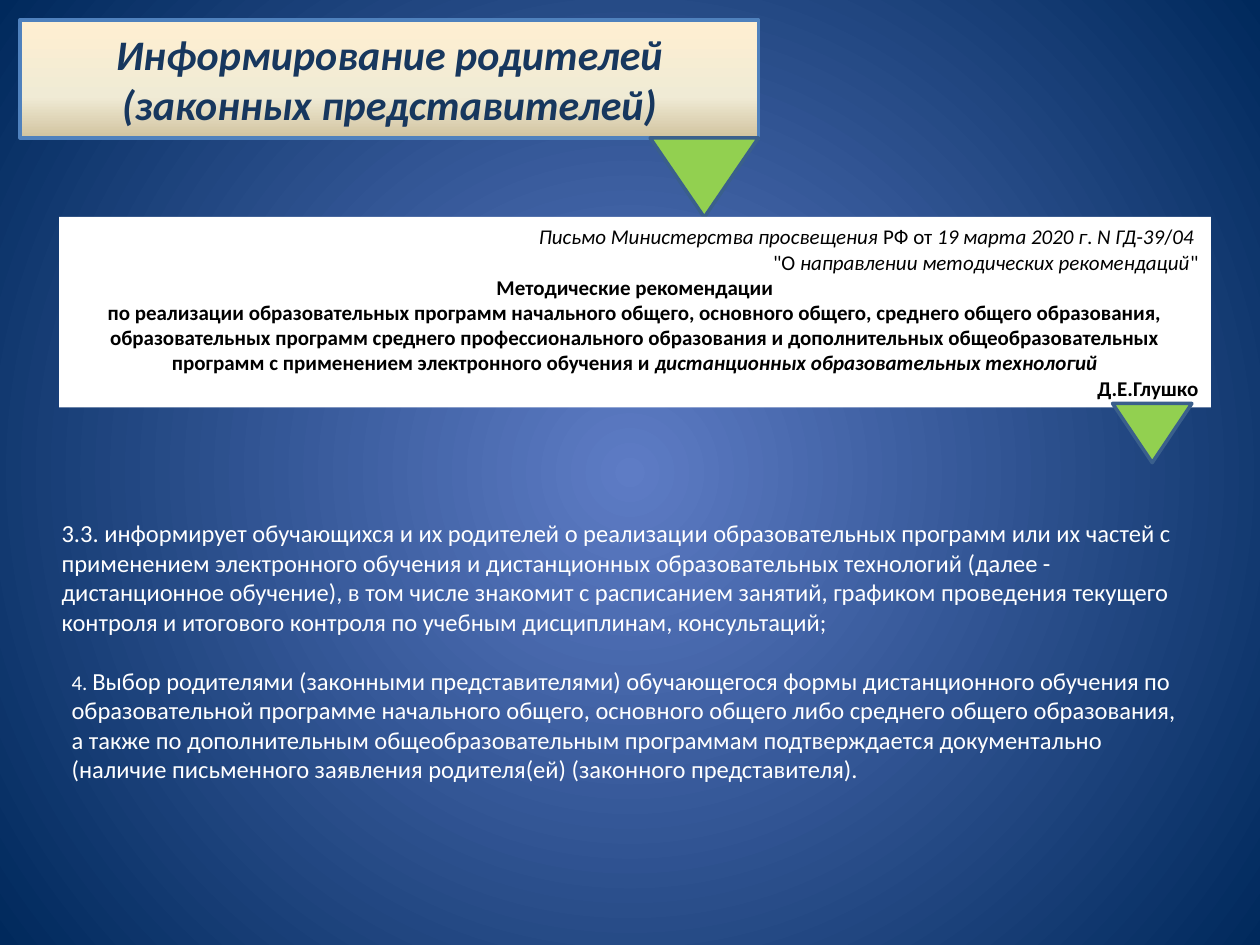
from dataclasses import dataclass

from lxml import etree
from pptx import Presentation
from pptx.dml.color import RGBColor
from pptx.enum.shapes import MSO_SHAPE
from pptx.enum.text import MSO_ANCHOR, PP_ALIGN
from pptx.oxml.ns import qn
from pptx.util import Inches, Pt

RECTANGLE = MSO_SHAPE.RECTANGLE
POINTER = MSO_SHAPE.FLOWCHART_MERGE
MIDDLE = MSO_ANCHOR.MIDDLE
LEFT, CENTER, RIGHT = PP_ALIGN.LEFT, PP_ALIGN.CENTER, PP_ALIGN.RIGHT
TITLE_ONLY = 5
BREAK = "\n"
WIDTH, HEIGHT = Inches(10), Inches(7.5)


@dataclass(frozen=True)
class Theme:
    font: str = "Calibri"
    title_size: int = 24
    body_size: int = 14
    letter_size: int = 12
    border: float = 2
    title_ink: str = "17375E"
    title_border: str = "4F81BD"
    letter_ink: str = "000000"
    body_ink: str = "FFFFFF"
    paper: str = "FFFFFF"
    pointer: str = "92D050"
    pointer_border: str = "3A5F8C"
    title_stops: tuple = ((0, "FFEFD1"), (65, "F0EBD5"), (100, "D1C39F"))
    backdrop_stops: tuple = ((0, "5E7CC5"), (100, "00295C"))


THEME = Theme()

TITLE = "Информирование родителей (законных представителей)"

LETTER = [
    (RIGHT, [
        ("Письмо Министерства просвещения", "i"), (" РФ от ", ""),
        ("19 марта 2020 г", "i"), (". ", ""), ("N ГД", "i"), ("-", ""),
        ("39", "i"), ("/", ""), ("04 ", "i"),
    ]),
    (RIGHT, [
        ('"О ', ""), ("направлении методических рекомендаций", "i"), ('"', ""),
    ]),
    (CENTER, [
        ("Методические рекомендации", "b"), (BREAK, ""),
        ("по реализации образовательных программ начального общего, основного "
         "общего, среднего общего образования, образовательных программ среднего "
         "профессионального образования и дополнительных общеобразовательных "
         "программ с применением электронного обучения и ", "b"),
        ("дистанционных образовательных технологий", "bi"),
    ]),
    (RIGHT, [("Д.Е.Глушко", "b")]),
]

INFORMING = (
    "3.3. информирует обучающихся и их родителей о реализации образовательных "
    "программ или их частей с применением электронного обучения и дистанционных "
    "образовательных технологий (далее - дистанционное обучение), в том числе "
    "знакомит с расписанием занятий, графиком проведения текущего контроля и "
    "итогового контроля по учебным дисциплинам, консультаций;"
)

CHOICE = (
    "Выбор родителями (законными представителями) обучающегося формы "
    "дистанционного обучения по образовательной программе начального общего, "
    "основного общего либо среднего общего образования, а также по дополнительным "
    "общеобразовательным программам подтверждается документально (наличие "
    "письменного заявления родителя(ей) (законного представителя)."
)


def area(left, top, width, height):
    return (int(WIDTH * left / 100), int(HEIGHT * top / 100),
            int(WIDTH * width / 100), int(HEIGHT * height / 100))


def paint_gradient(fill, owner, stops, radial=False):
    fill.gradient()
    gradient = next(owner.iter(qn("a:gradFill")))
    for child in list(gradient):
        gradient.remove(child)
    stop_list = etree.SubElement(gradient, qn("a:gsLst"))
    for percent, color in stops:
        stop = etree.SubElement(stop_list, qn("a:gs"), pos=str(percent * 1000))
        etree.SubElement(stop, qn("a:srgbClr"), val=color)
    if radial:
        circle = etree.SubElement(gradient, qn("a:path"), path="circle")
        center = dict.fromkeys("ltrb", "50000")
        etree.SubElement(circle, qn("a:fillToRect"), center)
    else:
        etree.SubElement(gradient, qn("a:lin"), ang="5400000", scaled="0")


def outline(shape, color):
    shape.line.color.rgb = RGBColor.from_string(color)
    shape.line.width = Pt(THEME.border)


def style_run(run, size, color, style=""):
    run.font.name = THEME.font
    run.font.size = Pt(size)
    run.font.color.rgb = RGBColor.from_string(color)
    run.font.bold = "b" in style
    run.font.italic = "i" in style


def add_title(slide, place):
    title = slide.shapes.title
    title.left, title.top, title.width, title.height = place
    paint_gradient(title.fill, title._element, THEME.title_stops)
    outline(title, THEME.title_border)
    title.text_frame.text = TITLE
    title.text_frame.vertical_anchor = MIDDLE
    heading = title.text_frame.paragraphs[0]
    heading.alignment = CENTER
    style_run(heading.runs[0], THEME.title_size, THEME.title_ink, "bi")


def add_block(slide, shape_type, place, color):
    block = slide.shapes.add_shape(shape_type, *place)
    block.shadow.inherit = False
    block.fill.solid()
    block.fill.fore_color.rgb = RGBColor.from_string(color)
    block.line.fill.background()
    return block


def add_pointer(slide, place):
    outline(add_block(slide, POINTER, place, THEME.pointer), THEME.pointer_border)


def add_letter(slide, place):
    frame = add_block(slide, RECTANGLE, place, THEME.paper).text_frame
    frame.word_wrap = True
    frame.vertical_anchor = MIDDLE
    for index, (alignment, pieces) in enumerate(LETTER):
        paragraph = frame.add_paragraph() if index else frame.paragraphs[0]
        paragraph.alignment = alignment
        for words, style in pieces:
            if words == BREAK:
                paragraph.add_line_break()
                continue
            run = paragraph.add_run()
            run.text = words
            style_run(run, THEME.letter_size, THEME.letter_ink, style)


def add_clause(slide, place, pieces):
    frame = slide.shapes.add_textbox(*place).text_frame
    frame.word_wrap = True
    frame.vertical_anchor = MIDDLE
    clause = frame.paragraphs[0]
    clause.alignment = LEFT
    for words, size in pieces:
        run = clause.add_run()
        run.text = words
        style_run(run, size, THEME.body_ink)


def main():
    deck = Presentation()
    deck.slide_width, deck.slide_height = WIDTH, HEIGHT
    slide = deck.slides.add_slide(deck.slide_layouts[TITLE_ONLY])
    paint_gradient(slide.background.fill, slide._element, THEME.backdrop_stops, True)

    add_title(slide, area(1.6, 2.1, 58.6, 12.5))
    add_pointer(slide, area(51.6, 14.6, 8.6, 8.4))
    add_letter(slide, area(4.7, 22.95, 91.4, 20.15))
    add_pointer(slide, area(88.3, 42.7, 6.3, 6.27))
    add_clause(slide, area(4.7, 69.75, 90.6, 13.85),
               [("4. ", THEME.letter_size), (CHOICE, THEME.body_size)])
    add_clause(slide, area(3.9, 54.15, 92.2, 13.85), [(INFORMING, THEME.body_size)])

    deck.save("out.pptx")


if __name__ == "__main__":
    main()
